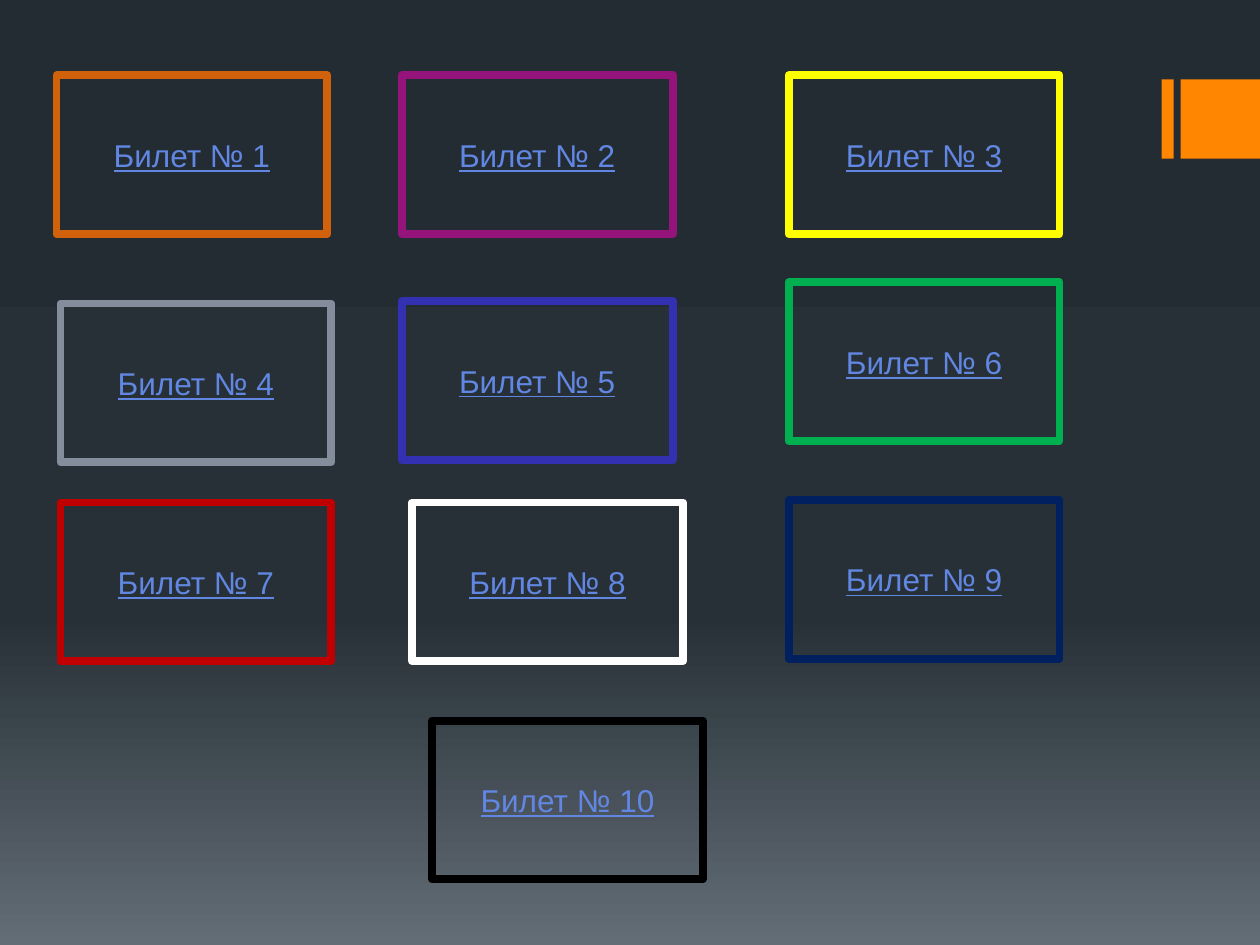
import copy
import pptx
import pptx.util
import pptx.dml.color
import pptx.enum.shapes
import pptx.enum.text

Cm = pptx.util.Cm
WIDE, HIGH = 5.46, 3.2

CARDS = [
    (1.14, 1.52, "D2610C"),
    (8.1, 1.52, "94147C"),
    (15.9, 1.52, "FFFF00"),
    (1.22, 6.12, "838D9B"),
    (8.1, 6.07, "3330B1"),
    (15.9, 5.69, "00B050"),
    (1.22, 10.13, "C00000"),
    (8.31, 10.13, "FFFFFF"),
    (15.9, 10.08, "002060"),
    (8.71, 14.53, "000000"),
]


def paint(color, tone):
    color.rgb = pptx.dml.color.RGBColor.from_string(tone)


def draw_back(slide, stops):
    fill = slide.background.fill
    fill.gradient()
    fill.gradient_angle = 270
    group = slide.element.xpath(".//a:gsLst")[0]
    group.append(copy.deepcopy(group[0]))
    for stop, (place, tone) in zip(fill.gradient_stops, stops):
        stop.position = place
        paint(stop.color, tone)


def add_box(slide, left, top, wide, high):
    kind = pptx.enum.shapes.MSO_SHAPE.RECTANGLE
    box = slide.shapes.add_shape(kind, Cm(left), Cm(top), Cm(wide), Cm(high))
    box.shadow.inherit = False
    return box


def draw_tab(slide, left, top, wide, high):
    thin, gap = 0.24, 0.14
    start = thin + gap
    for shift, part in ((0, thin), (start, wide - start)):
        bar = add_box(slide, left + shift, top, part, high)
        bar.fill.solid()
        paint(bar.fill.fore_color, "FF8600")
        bar.line.fill.background()


def draw_card(slide, left, top, wide, high, text, tone):
    card = add_box(slide, left, top, wide, high)
    card.fill.background()
    paint(card.line.color, tone)
    card.line.width = pptx.util.Pt(4.5)
    frame = card.text_frame
    frame.word_wrap = True
    frame.vertical_anchor = pptx.enum.text.MSO_ANCHOR.MIDDLE
    para = frame.paragraphs[0]
    para.alignment = pptx.enum.text.PP_ALIGN.CENTER
    run = para.add_run()
    run.text = text
    run.font.name = "Arial"
    run.font.size = pptx.util.Pt(18)
    run.font.underline = True
    paint(run.font.color, "6187E3")


def main():
    deck = pptx.Presentation()
    deck.slide_width, deck.slide_height = Cm(25.4), Cm(19.05)
    slide = deck.slides.add_slide(deck.slide_layouts[6])
    draw_back(slide, [(0, "242C33"), (0.65, "273037"), (1, "636D76")])
    draw_tab(slide, 23.42, 1.6, 1.98, 1.6)
    for num, (left, top, tone) in enumerate(CARDS, 1):
        draw_card(slide, left, top, WIDE, HIGH, f"Билет № {num}", tone)
    deck.save("out.pptx")


if __name__ == "__main__":
    main()
